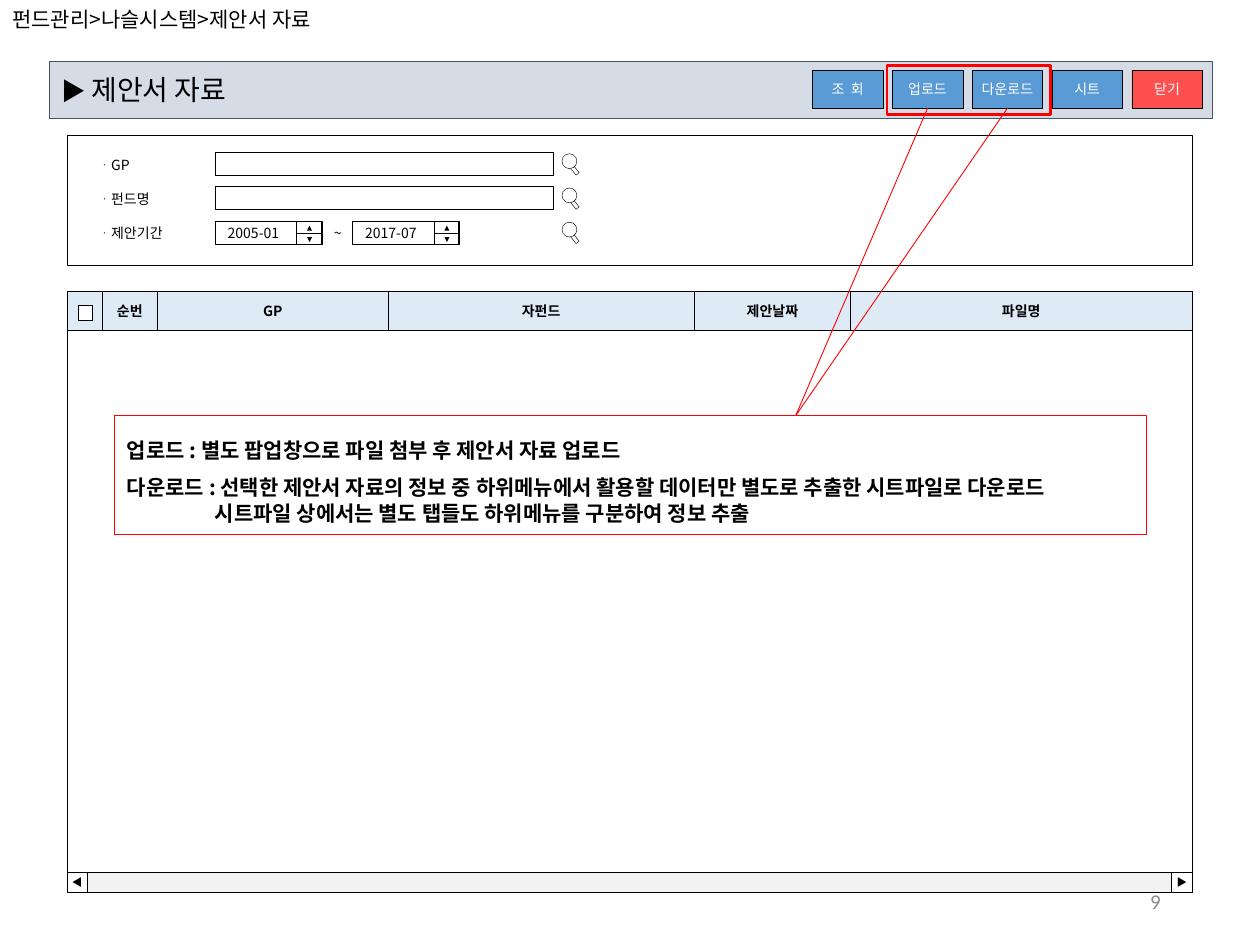
"""Build the proposal document screen with its upload and download note."""
from itertools import accumulate
from lxml import etree
from pptx import Presentation
from pptx.dml.color import RGBColor
from pptx.enum.shapes import MSO_CONNECTOR, MSO_SHAPE
from pptx.enum.text import MSO_ANCHOR, MSO_AUTO_SIZE, PP_ALIGN
from pptx.oxml.ns import qn
from pptx.util import Cm, Pt

RECT, OVAL, TRI = MSO_SHAPE.RECTANGLE, MSO_SHAPE.OVAL, MSO_SHAPE.ISOSCELES_TRIANGLE
LEFT, MID, RIGHT = PP_ALIGN.LEFT, PP_ALIGN.CENTER, PP_ALIGN.RIGHT
STRAIGHT = MSO_CONNECTOR.STRAIGHT
FONT = "Noto Sans CJK KR"
HUES = {"ink": "000000", "white": "FFFFFF", "bar": "D6DCE5", "edge": "44546A",
        "blue": "5B9BD5", "close": "FF5050", "head": "DEEBF7", "track": "F2F2F2",
        "red": "FF0000", "gray": "8C8C8C"}

PATH = "펀드관리>나슬시스템>제안서 자료"
NAME = [("▶ ", 14), ("제안서 자료", 16)]
KEYS = [("조  회", "blue"), ("업로드", "blue"), ("다운로드", "blue"),
        ("시트", "blue"), ("닫기", "close")]
ROWS = [("ᆞGP", 3.05), ("ᆞ펀드명", 3.74), ("ᆞ제안기간", 4.43)]
DATES = [("2005-01", 4.34), ("2017-07", 7.11)]
COLS = [("", 0.71), ("순번", 1.12), ("GP", 4.64), ("자펀드", 6.18),
        ("제안날짜", 3.15), ("파일명", 6.88)]
NOTES = [("업로드 : 별도 팝업창으로 파일 첨부 후 제안서 자료 업로드", 1.5, 0),
         ("다운로드 : 선택한 제안서 자료의 정보 중 하위메뉴에서 활용할 데이터만 "
          "별도로 추출한 시트파일로 다운로드", 1.5, 0),
         ("시트파일 상에서는 별도 탭들도 하위메뉴를 구분하여 정보 추출", 1, 1.77)]
PAGE = "9"
EDGE, WIDE, TOP, TALL = 1.35, 22.68, 5.87, 12.12
KEY, STEP, KEYTOP, KEYW, KEYH = 16.38, 1.61, 1.42, 1.42, 0.76
NOTE = (2.31, 8.38, 20.8, 2.39)


def tint(hue):
    return RGBColor.from_string(HUES[hue])


def style(item, pairs):
    for key, val in pairs.items():
        setattr(item, key, val)


def place(item, box):
    style(item, dict(zip(("left", "top", "width", "height"), map(Cm, box))))


def frame(shape, pad=(0.25, 0.13)):
    body = shape.text_frame
    side, end = map(Cm, pad)
    style(body, {"word_wrap": True, "auto_size": MSO_AUTO_SIZE.NONE,
                 "vertical_anchor": MSO_ANCHOR.MIDDLE, "margin_left": side,
                 "margin_right": side, "margin_top": end, "margin_bottom": end})
    return body


def write(para, text, size=8, hue="ink", bold=False, align=LEFT, face=FONT):
    run = para.add_run()
    run.text = text
    style(para, {"alignment": align, "space_before": Pt(0)})
    style(run.font, {"size": Pt(size), "bold": bold, "name": face})
    run.font.color.rgb = tint(hue)
    etree.SubElement(run.font._element, qn("a:ea")).set("typeface", face)


def rim(shape, hue, width=0.25):
    shape.line.color.rgb = tint(hue)
    shape.line.width = Pt(width)


def draw(box, fill=None, line="ink", text="", kind=RECT, width=0.25, turn=0,
         pad=(0.25, 0.13), **look):
    shape = slide.shapes.add_shape(kind, *map(Cm, box))
    shape.shadow.inherit = False
    shape.rotation = turn
    if fill:
        shape.fill.solid()
        shape.fill.fore_color.rgb = tint(fill)
    else:
        shape.fill.background()
    if line:
        rim(shape, line, width)
    else:
        shape.line.fill.background()
    if text:
        write(frame(shape, pad).paragraphs[0], text, **look)
    return shape


def label(box, text, **look):
    write(frame(slide.shapes.add_textbox(*map(Cm, box))).paragraphs[0], text, **look)


def lens(top):
    draw((11.4, top + 0.25, 0.3, 0.08), turn=51.8)
    draw((11.33, top, 0.3, 0.3), "white", kind=OVAL)


def spin(left, top):
    draw((left, top, 0.51, 0.46))
    for drop, turn in ((0.08, 0), (0.31, 180)):
        draw((left + 0.21, top + drop, 0.1, 0.1), "ink", None, kind=TRI, turn=turn)
    draw((left, top + 0.23, 0.51, 0.23))


deck = Presentation()
style(deck, {"slide_width": Cm(25.4), "slide_height": Cm(19.05)})
slide = deck.slides.add_slide(deck.slide_layouts[1])
title, note = slide.placeholders
place(title, (0, -0.03, 25.4, 0.84))
write(frame(title).paragraphs[0], PATH, 12)

place(note, NOTE)
rim(note, "red")
body = frame(note)
for spot, (text, gap, inset) in enumerate(NOTES):
    para = body.add_paragraph() if spot else body.paragraphs[0]
    write(para, text, 12, bold=True)
    para.line_spacing = gap
    props = para._p.get_or_add_pPr()
    props.set("marL", str(Cm(inset)))
    props.set("indent", "0")
    etree.SubElement(props, qn("a:buNone"))

bar = frame(draw((0.99, 1.24, 23.44, 1.14), "bar", "edge"))
for text, size in NAME:
    write(bar.paragraphs[0], text, size)
for spot, (text, hue) in enumerate(KEYS):
    draw((KEY + spot * STEP, KEYTOP, KEYW, KEYH), hue, text=text, pad=(0.1, 0.1),
         hue="white", align=MID)

draw((EDGE, 2.72, WIDE, 2.62))
draw((EDGE, TOP, WIDE, TALL))
for text, top in ROWS:
    label((1.73, top, 2.62, 0.53), text)
    lens(top + 0.05)
for _, top in ROWS[:2]:
    draw((4.34, top + 0.02, 6.81, 0.46))
for text, left in DATES:
    draw((left, 4.47, 2.13, 0.46), text=text)
    spin(left + 1.64, 4.47)
label((6.48, 4.47, 0.61, 0.46), "~")

sides = accumulate((wide for _, wide in COLS), initial=EDGE)
for (text, wide), left in zip(COLS, sides):
    draw((left, TOP, wide, 0.79), "head", text=text, bold=True, align=MID)
draw((1.57, 6.15, 0.3, 0.3), "white")

draw((EDGE, 17.58, WIDE, 0.41), "track")
for text, left, align in (("◀", EDGE, LEFT), ("▶", EDGE + WIDE - 0.41, RIGHT)):
    draw((left, 17.58, 0.41, 0.41), "white", text=text, size=6, align=align, pad=(0.1, 0))
label((17.93, 17.65, 5.72, 1.02), PAGE, size=12, hue="gray", align=RIGHT, face="Calibri")

for spot in (1, 2):
    start = KEY + spot * STEP + KEYW / 2
    ends = (start, KEYTOP + KEYH, 16.04, NOTE[1])
    link = slide.shapes.add_connector(STRAIGHT, *map(Cm, ends))
    rim(link, "red", 0.5)
    etree.SubElement(link._element.spPr, qn("a:effectLst"))
draw((17.88, 1.32, 3.3, 0.99), line="red", width=1.5)

deck.save("out.pptx")
